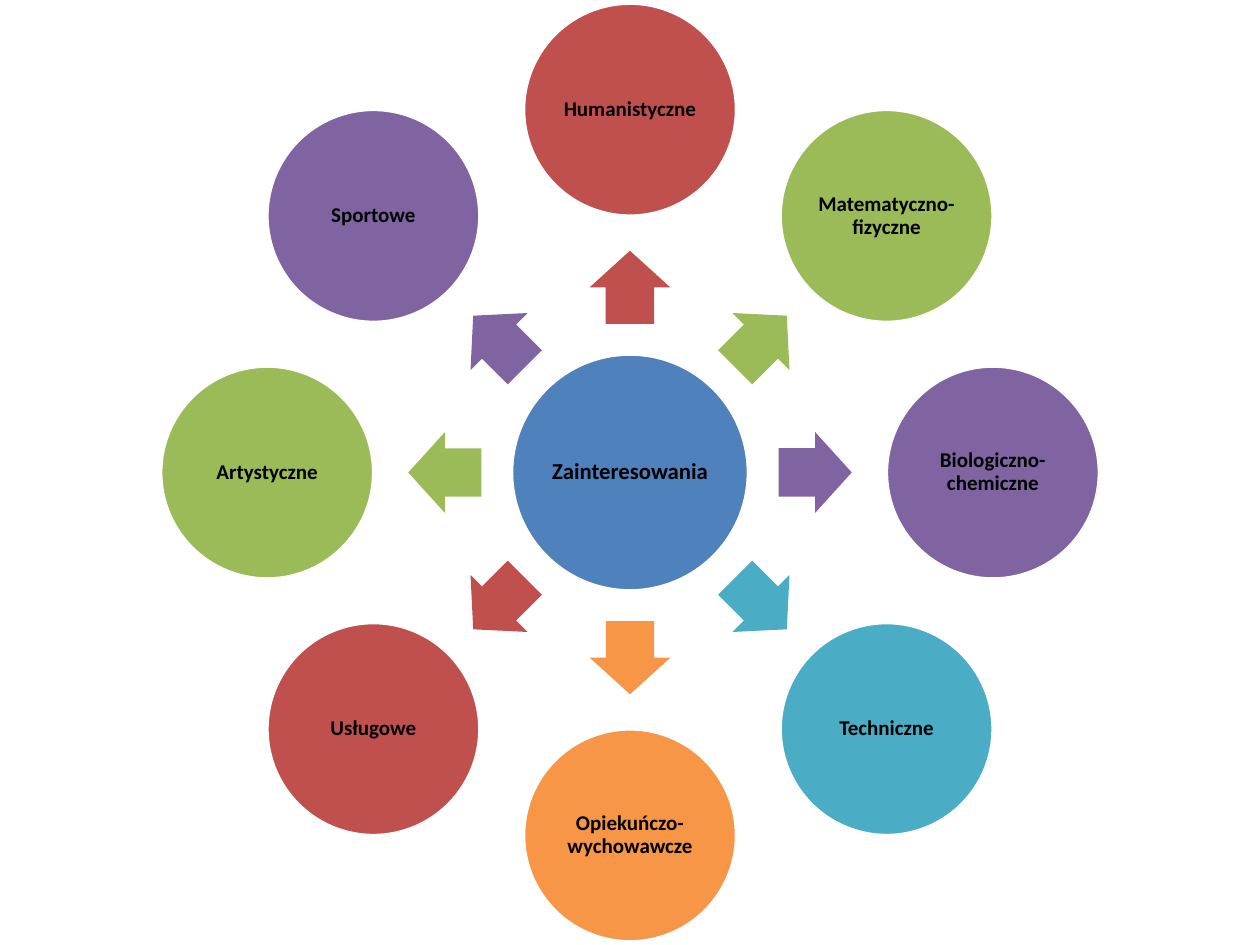
from math import cos, radians, sin

from pptx import Presentation, util as u
from pptx.dml.color import RGBColor
from pptx.enum import shapes, text

THEME = {
    "blue": "4F81BD", "red": "C0504D", "green": "9BBB59", "purple": "8064A2",
    "teal": "4BACC6", "orange": "F79646", "outline": "FFFFFF", "ink": "000000",
    "font": "Calibri", "hub_size": 13, "interest_size": 12,
}
INTERESTS = [  # clockwise from the top
    (["Humanistyczne"], "red"),
    (["Matematyczno-", "fizyczne"], "green"),
    (["Biologiczno-", "chemiczne"], "purple"),
    (["Techniczne"], "teal"),
    (["Opiekuńczo-wychowawcze"], "orange"),
    (["Usługowe"], "red"),
    (["Artystyczne"], "green"),
    (["Sportowe"], "purple"),
]
HUB_DIAMETER, INTEREST_DIAMETER = 1.88, 1.69
ARROW_LENGTH, ARROW_WIDTH = 0.58, 0.64
ARROW_ORBIT, INTEREST_ORBIT = 1.47, 2.88

prs = Presentation()
prs.slide_width, prs.slide_height = u.Inches(10), u.Inches(7.5)
slide = prs.slides.add_slide(prs.slide_layouts[6])
wheel = slide.shapes.add_group_shape().shapes


def add_on_orbit(preset, orbit, angle, width, height, color):
    """Add a filled shape centred at an angle and distance from the slide's centre."""
    x = prs.slide_width / 2 + u.Inches(orbit * cos(radians(angle)))
    y = prs.slide_height / 2 + u.Inches(orbit * sin(radians(angle)))
    w, h = u.Inches(width), u.Inches(height)
    shape = wheel.add_shape(preset, int(x - w / 2), int(y - h / 2), w, h)
    shape.shadow.inherit = False
    shape.fill.solid()
    shape.fill.fore_color.rgb = RGBColor.from_string(THEME[color])
    shape.line.fill.background()
    return shape


def add_circle(lines, orbit, angle, diameter, color, size):
    circle = add_on_orbit(shapes.MSO_SHAPE.OVAL, orbit, angle, diameter, diameter, color)
    circle.line.color.rgb = RGBColor.from_string(THEME["outline"])
    circle.line.width = u.Pt(2)
    frame = circle.text_frame
    frame.word_wrap = True
    frame.vertical_anchor = text.MSO_ANCHOR.MIDDLE
    frame.margin_left = frame.margin_right = u.Inches(0.02)
    frame.margin_top = frame.margin_bottom = u.Inches(0.02)
    label = frame.paragraphs[0]
    label.alignment = text.PP_ALIGN.CENTER
    label.line_spacing = 0.9
    for i, line in enumerate(lines):
        if i:
            label.add_line_break()
        run = label.add_run()
        run.text = line
        run.font.name = THEME["font"]
        run.font.size = u.Pt(THEME[size])
        run.font.bold = True
        run.font.color.rgb = RGBColor.from_string(THEME["ink"])


add_circle(["Zainteresowania"], 0, 0, HUB_DIAMETER, "blue", "hub_size")
for i, (lines, color) in enumerate(INTERESTS):
    angle = i * 360 / len(INTERESTS) - 90
    arrow = add_on_orbit(shapes.MSO_SHAPE.RIGHT_ARROW, ARROW_ORBIT, angle,
                         ARROW_LENGTH, ARROW_WIDTH, color)
    arrow.rotation = angle % 360
    arrow.adjustments[0], arrow.adjustments[1] = 0.6, 0.5
    add_circle(lines, INTEREST_ORBIT, angle, INTEREST_DIAMETER, color, "interest_size")

prs.save("out.pptx")
